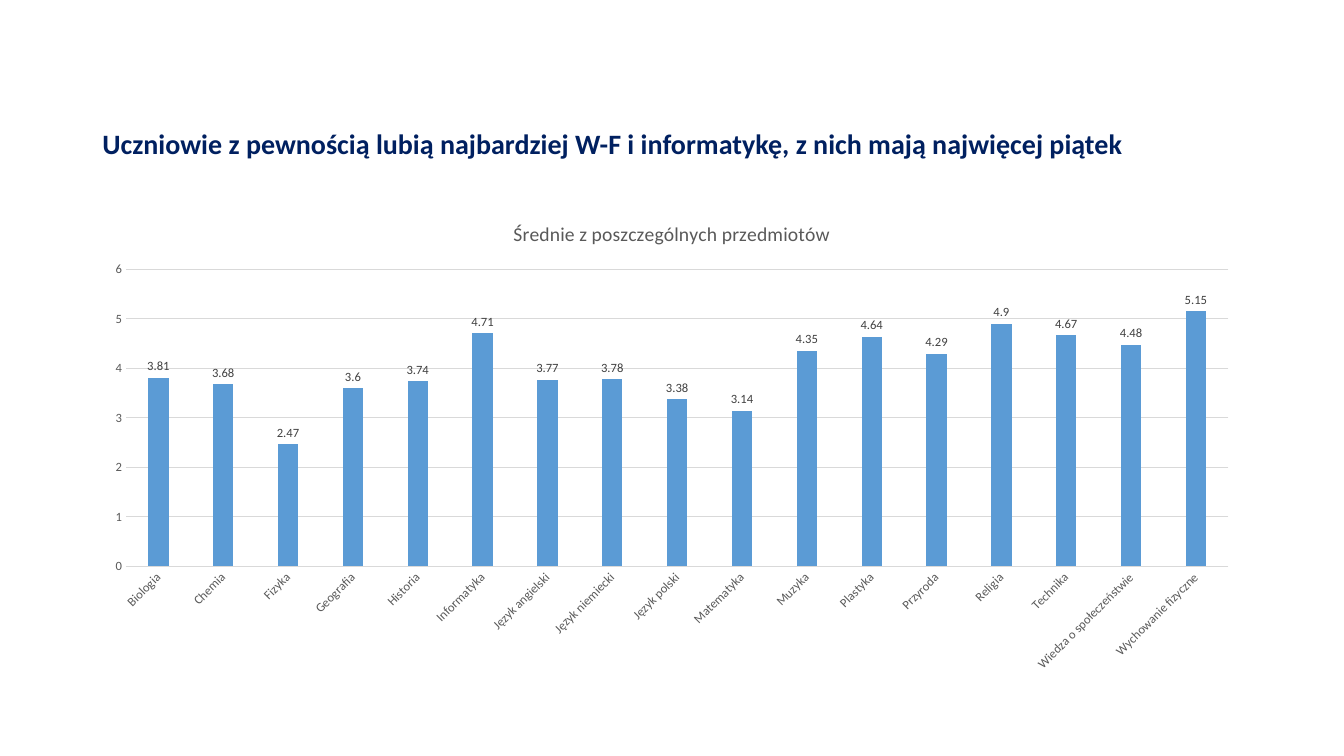
from dataclasses import dataclass

from pptx import Presentation
from pptx.chart.data import CategoryChartData
from pptx.dml.color import RGBColor
from pptx.enum import chart as chart_enum, text as text_enum
from pptx.util import Pt


@dataclass(frozen=True)
class Theme:
    font: str = "Calibri"
    heading: str = "002060"
    muted: str = "595959"
    label: str = "404040"
    grid: str = "D9D9D9"
    bar: str = "5B9BD5"
    heading_size: float = 20
    chart_title_size: float = 14
    chart_size: float = 10
    small_size: float = 9
    line_width: float = 0.75


THEME = Theme()

HEADING = (
    "Uczniowie z pewnością lubią najbardziej W-F i informatykę, "
    "z nich mają najwięcej piątek"
)
CHART_TITLE = "Średnie z poszczególnych przedmiotów"
SUBJECT_AVERAGES = {
    "Biologia": 3.81,
    "Chemia": 3.68,
    "Fizyka": 2.47,
    "Geografia": 3.6,
    "Historia": 3.74,
    "Informatyka": 4.71,
    "Język angielski": 3.77,
    "Język niemiecki": 3.78,
    "Język polski": 3.38,
    "Matematyka": 3.14,
    "Muzyka": 4.35,
    "Plastyka": 4.64,
    "Przyroda": 4.29,
    "Religia": 4.9,
    "Technika": 4.67,
    "Wiedza o społeczeństwie": 4.48,
    "Wychowanie fizyczne": 5.15,
}

LEFT, WIDTH = Pt(66), Pt(828)


def style_font(font, size, color, bold=False):
    font.name = THEME.font
    font.size = Pt(size)
    font.bold = bold
    font.color.rgb = RGBColor.from_string(color)


def write(text_frame, content, *, size, color, bold=False, line_spacing=None):
    """Put one formatted paragraph into a text frame."""
    paragraph = text_frame.paragraphs[0]
    if line_spacing:
        paragraph.line_spacing = line_spacing
    run = paragraph.add_run()
    run.text = content
    style_font(run.font, size, color, bold)


def style_line(line):
    line.color.rgb = RGBColor.from_string(THEME.grid)
    line.width = Pt(THEME.line_width)


def style_axis(axis):
    axis.major_tick_mark = chart_enum.XL_TICK_MARK.NONE
    axis.minor_tick_mark = chart_enum.XL_TICK_MARK.NONE
    style_font(axis.tick_labels.font, THEME.small_size, THEME.muted)


def add_heading(slide):
    box = slide.shapes.add_textbox(LEFT, Pt(74), WIDTH, Pt(59))
    frame = box.text_frame
    frame.word_wrap = True
    frame.vertical_anchor = text_enum.MSO_ANCHOR.MIDDLE
    write(frame, HEADING, size=THEME.heading_size, color=THEME.heading,
          bold=True, line_spacing=0.9)


def add_averages_chart(slide):
    data = CategoryChartData()
    data.categories = list(SUBJECT_AVERAGES)
    data.add_series("Series 1", list(SUBJECT_AVERAGES.values()))
    chart = slide.shapes.add_chart(
        chart_enum.XL_CHART_TYPE.COLUMN_CLUSTERED,
        LEFT, Pt(144), WIDTH, Pt(342.5), data,
    ).chart
    style_font(chart.font, THEME.chart_size, "000000")
    chart.has_legend = False
    write(chart.chart_title.text_frame, CHART_TITLE,
          size=THEME.chart_title_size, color=THEME.muted)
    chart.chart_title.include_in_layout = False

    style_axis(chart.category_axis)
    style_line(chart.category_axis.format.line)

    value_axis = chart.value_axis
    style_axis(value_axis)
    value_axis.format.line.fill.background()
    value_axis.minimum_scale = 0
    value_axis.maximum_scale = 6
    value_axis.major_unit = 1
    style_line(value_axis.major_gridlines.format.line)

    plot = chart.plots[0]
    plot.gap_width = 219
    plot.overlap = -27
    plot.vary_by_categories = False
    series = plot.series[0]
    series.format.fill.solid()
    series.format.fill.fore_color.rgb = RGBColor.from_string(THEME.bar)
    labels = series.data_labels
    labels.show_value = True
    labels.position = chart_enum.XL_LABEL_POSITION.OUTSIDE_END
    style_font(labels.font, THEME.small_size, THEME.label)


def main():
    presentation = Presentation()
    presentation.slide_width = Pt(960)
    presentation.slide_height = Pt(540)
    slide = presentation.slides.add_slide(presentation.slide_layouts[6])
    add_heading(slide)
    add_averages_chart(slide)
    presentation.save("out.pptx")


if __name__ == "__main__":
    main()
